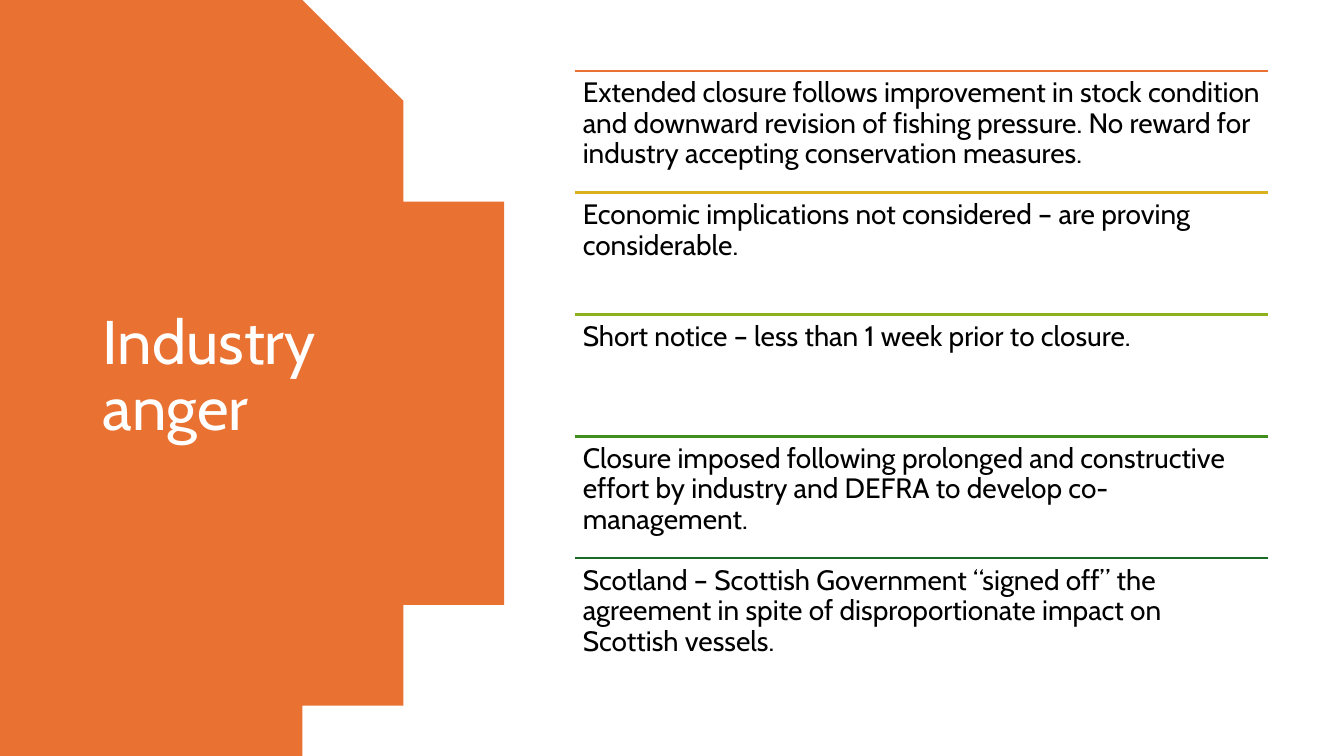
from math import asin, cos, sin

from lxml.etree import SubElement
from pptx import Presentation
from pptx.dml.color import RGBColor as RGB
from pptx.enum.shapes import MSO_CONNECTOR as Conn
from pptx.enum.text import MSO_ANCHOR as Anchor
from pptx.oxml.ns import qn
from pptx.util import Inches, Pt

# Content
TITLE = "Industry anger"
ORANGE = RGB(0xE9, 0x71, 0x32)
WHITE = RGB(0xFF, 0xFF, 0xFF)
BLACK = RGB(0x00, 0x00, 0x00)
FONT = "Cabin"
POINTS = [
    (ORANGE, "Extended closure follows improvement in stock condition and "
             "downward revision of fishing pressure. No reward for industry "
             "accepting conservation measures."),
    (RGB(0xD8, 0xB1, 0x1D), "Economic implications not considered – are "
                            "proving considerable."),
    (RGB(0x8E, 0xB2, 0x1E), "Short notice – less than 1 week prior to "
                            "closure."),
    (RGB(0x40, 0x8E, 0x1C), "Closure imposed following prolonged and "
                            "constructive effort by industry and DEFRA to "
                            "develop co-management."),
    (RGB(0x19, 0x6B, 0x24), "Scotland – Scottish Government “signed off” the "
                            "agreement in spite of disproportionate impact "
                            "on Scottish vessels."),
]

# Layout in inches
WIDE, HIGH = 13.33, 7.5
MID = HIGH / 2
RADIUS, HUB = 4.4, 0.53  # disc radius and the x of its centre
STEPS = 80
LEFT, TOP, SPAN, ROW = 5.7, 0.7, 6.88, 1.21

deck = Presentation()
deck.slide_width, deck.slide_height = Inches(WIDE), Inches(HIGH)
slide = deck.slides.add_slide(deck.slide_layouts[6])
shapes = slide.shapes


def add_text(text, box, size, color, pad, anchor=Anchor.TOP):
    frame = shapes.add_textbox(*map(Inches, box)).text_frame
    frame.word_wrap = True
    frame.vertical_anchor = anchor
    frame.margin_left = frame.margin_right = Inches(pad[0])
    frame.margin_top = frame.margin_bottom = Inches(pad[1])
    para = frame.paragraphs[0]
    para.line_spacing = 0.9
    run = para.add_run()
    run.text = text
    run.font.name = FONT
    run.font.size = Pt(size)
    run.font.color.rgb = color


def add_rule(y, color):
    rule = shapes.add_connector(Conn.STRAIGHT, Inches(LEFT), Inches(y),
                                Inches(LEFT + SPAN), Inches(y))
    rule.line.color.rgb = color
    rule.line.width = Pt(1.5)
    SubElement(rule._element.spPr, qn("a:effectLst"))


# Orange disc, cut off by the slide's edges
half = asin(MID / RADIUS)
turns = [half * (2 * i / STEPS - 1) for i in range(STEPS + 1)]
arc = [(HUB + RADIUS * cos(t), MID + RADIUS * sin(t)) for t in turns]
pen = shapes.build_freeform(0, 0, scale=Inches(1))
pen.add_line_segments(arc + [(0, HIGH)], close=True)
disc = pen.convert_to_shape()
disc.shadow.inherit = False
disc.fill.solid()
disc.fill.fore_color.rgb = ORANGE
disc.line.fill.background()

# Title
add_text(TITLE, (0.92, 0.7, 3.23, 6.09), 44, WHITE, (0.1, 0.05),
         Anchor.MIDDLE)

# Points, each under its own rule
for i, (color, text) in enumerate(POINTS):
    y = TOP + i * ROW
    add_rule(y, color)
    add_text(text, (LEFT, y, SPAN, ROW), 20, BLACK, (0.08, 0.08))

deck.save("out.pptx")
